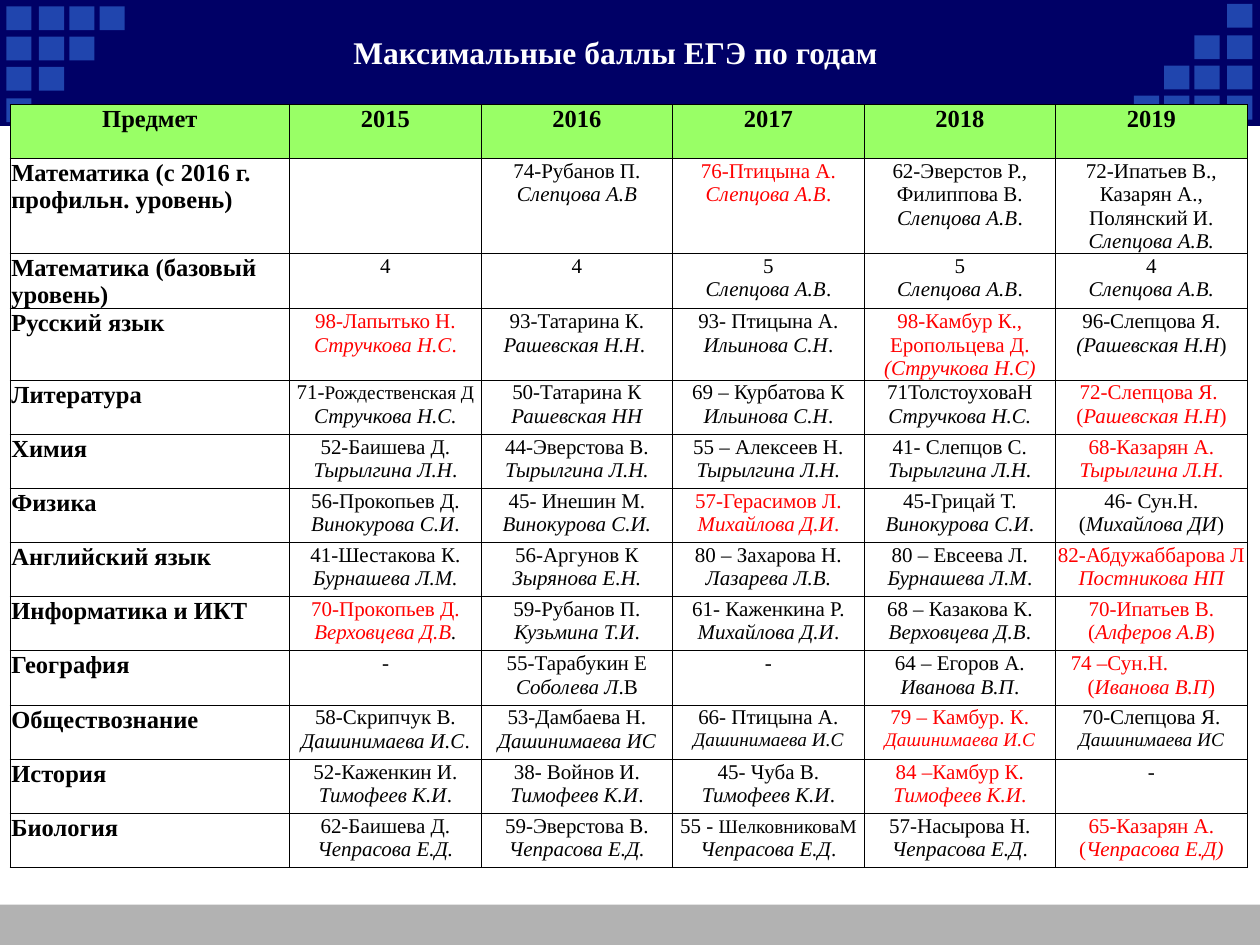
from lxml.etree import SubElement
from pptx import Presentation
from pptx.dml.color import RGBColor
from pptx.enum.shapes import MSO_SHAPE
from pptx.enum.text import MSO_ANCHOR, PP_ALIGN
from pptx.oxml.ns import qn
from pptx.util import Inches, Pt

FONT = "Times New Roman"
NAVY, BLUE, GREY, GREEN = "000066", "2045AE", "B2B2B2", "99FF66"
BLACK, WHITE, RED = "000000", "FFFFFF", "FF0000"

TITLE = "Максимальные баллы ЕГЭ по годам"
HEADER = ["Предмет", "2015", "2016", "2017", "2018", "2019"]
# Marks inside a cell: | new paragraph, * italic, ~ small, ^ red (each on or off).
RESULTS = [
    ["Математика (с 2016 г. профильн. уровень)", "", "74-Рубанов П.|*Слепцова А.В*",
     "^76-Птицына А.|*Слепцова А.В*.", "62-Эверстов Р., Филиппова В.|*Слепцова А.В*.",
     "72-Ипатьев В., Казарян А., Полянский И.|*Слепцова А.В.*"],
    ["Математика (базовый уровень)", "4", "4", "5|*Слепцова А.В*.",
     "5|*Слепцова А.В*.", "4|*Слепцова А.В.*"],
    ["Русский язык", "^98-Лапытько Н.|*Стручкова Н.С*.", "93-Татарина К.|*Рашевская Н.Н*. ",
     "93- Птицына А.|*Ильинова С.Н*.", "^98-Камбур К., Еропольцева Д.|*(Стручкова Н.С)*",
     "96-Слепцова Я.|*(Рашевская Н.Н*)"],
    ["Литература", "71-~Рождественская Д~|*Стручкова Н.С.*", "50-Татарина К|*Рашевская НН*",
     "69 – Курбатова К|*Ильинова С.Н*.", "71ТолстоуховаН|*Стручкова Н.С.*",
     "^72-Слепцова Я. |(*Рашевская Н.Н*)"],
    ["Химия", "52-Баишева Д.|*Тырылгина Л.Н*.", "44-Эверстова В.|*Тырылгина Л.Н.*",
     "55 – Алексеев Н.|*Тырылгина Л.Н.*", "41- Слепцов С.|*Тырылгина Л.Н.*",
     "^68-Казарян А.|*Тырылгина Л.Н*."],
    ["Физика", "56-Прокопьев Д.|*Винокурова С.И*.", "45- Инешин М. *Винокурова С.И.*",
     "^57-Герасимов Л.|*Михайлова Д.И*.", "45-Грицай Т.|*Винокурова С.И*.",
     "46- Сун.Н. (*Михайлова ДИ*)"],
    ["Английский язык", "41-Шестакова К.|*Бурнашева Л.М.*", "56-Аргунов К *Зырянова Е.Н.*",
     "80 – Захарова Н.|*Лазарева Л.В.*", "80 – Евсеева Л.|*Бурнашева Л.М*.",
     "^82-Абдужаббарова Л|*Постникова НП*"],
    ["Информатика и ИКТ", "^70-Прокопьев Д.|*Верховцева Д.В^.*", "59-Рубанов П.|*Кузьмина Т.И*.",
     "61- Каженкина Р.|*Михайлова Д.И*.", "68 – Казакова К.|*Верховцева Д.В*.",
     "^70-Ипатьев В.|(*Алферов А.В*)"],
    ["География", "-", "55-Тарабукин Е|*Соболева Л*.В", "-", "64 – Егоров А.|*Иванова В.П*.",
     "^74 –Сун.Н.|(*Иванова В.П*)"],
    ["Обществознание", "58-Скрипчук В.|*Дашинимаева И.С*.", "53-Дамбаева Н.|*Дашинимаева ИС*",
     "66- Птицына А.|~*Дашинимаева И.С*~", "^79 – Камбур. К.|~*Дашинимаева И.С*~",
     "70-Слепцова Я.|~*Дашинимаева ИС*~"],
    ["История", "52-Каженкин И.|*Тимофеев К.И*.", "38- Войнов И.|*Тимофеев К.И*.",
     "45- Чуба В.|*Тимофеев К.И*.", "^84 –Камбур К.|*Тимофеев К.И*.", "-"],
    ["Биология", "62-Баишева Д.|*Чепрасова Е.Д.*", "59-Эверстова В.|*Чепрасова Е.Д.*",
     "55 - ~ШелковниковаМ~|*Чепрасова Е.Д*.", "57-Насырова Н.|*Чепрасова Е.Д*.",
     "^65-Казарян А.|(*Чепрасова Е.Д)*"],
]
COLUMN_WIDTHS = [2.22] + [1.52] * 5
ROW_HEIGHTS = [0.43, 0.47] + [0.43] * 11
SQUARE_LEFTS = [0.05, 0.31, 0.55, 0.79]
SQUARE_TOPS = [0.05, 0.29, 0.53, 0.78]
SQUARE_WIDTH, SQUARE_HEIGHT = 0.2, 0.19
CELL_FORMAT = {"margin_left": Inches(0.01), "margin_right": Inches(0.01),
               "margin_top": Inches(0.01), "margin_bottom": 0,
               "vertical_anchor": MSO_ANCHOR.TOP}


def color(value):
    return RGBColor.from_string(value)


def add_rectangle(slide, left, top, width, height, fill):
    shape = slide.shapes.add_shape(MSO_SHAPE.RECTANGLE, Inches(left), Inches(top),
                                   Inches(width), Inches(height))
    shape.shadow.inherit = False
    shape.fill.solid()
    shape.fill.fore_color.rgb = color(fill)
    shape.line.fill.background()


def add_run(paragraph, text, size, text_color, bold=False, italic=False):
    run = paragraph.add_run()
    run.text = text
    values = {"name": FONT, "size": Pt(size), "bold": bold, "italic": italic}
    for name, value in values.items():
        setattr(run.font, name, value)
    run.font.color.rgb = color(text_color)


def write_marked(text_frame, text, size, bold):
    """Write text, turning its marks into paragraphs and run formats."""
    active = {"*": False, "~": False, "^": False}
    for index, line in enumerate(text.split("|")):
        paragraph = text_frame.paragraphs[0] if index == 0 else text_frame.add_paragraph()
        pending = ""
        for character in line + "\n":
            if character not in active and character != "\n":
                pending += character
                continue
            if pending:
                add_run(paragraph, pending, 11 if active["~"] else size,
                        RED if active["^"] else BLACK, bold, active["*"])
                pending = ""
            if character in active:
                active[character] = not active[character]


def add_borders(cell):
    properties = cell._tc.get_or_add_tcPr()
    for index, side in enumerate(["lnL", "lnR", "lnT", "lnB"]):
        line = SubElement(properties, qn(f"a:{side}"), w=str(Pt(0.5)))
        fill = SubElement(line, qn("a:solidFill"))
        SubElement(fill, qn("a:srgbClr"), val=BLACK)
        properties.insert(index, line)


def add_background(slide):
    add_rectangle(slide, 0, 7.18, 10, 0.32, GREY)
    add_rectangle(slide, 0, 0, 10, 1, NAVY)
    for row, top in enumerate(SQUARE_TOPS):
        for left in SQUARE_LEFTS[:4 - row]:
            turned = (9.99 - left - SQUARE_WIDTH, 1 - top - SQUARE_HEIGHT)
            for place in [(left, top), turned]:
                add_rectangle(slide, *place, SQUARE_WIDTH, SQUARE_HEIGHT, BLUE)


def add_results(slide):
    rows = [HEADER] + RESULTS
    table = slide.shapes.add_table(len(rows), len(HEADER), Inches(0.08), Inches(0.83),
                                   Inches(sum(COLUMN_WIDTHS)), Inches(sum(ROW_HEIGHTS))).table
    table.first_row = table.horz_banding = False
    for column, width in zip(table.columns, COLUMN_WIDTHS):
        column.width = Inches(width)
    for row, height in zip(table.rows, ROW_HEIGHTS):
        row.height = Inches(height)
    for row_index, texts in enumerate(rows):
        for column_index, text in enumerate(texts):
            cell = table.cell(row_index, column_index)
            for name, value in CELL_FORMAT.items():
                setattr(cell, name, value)
            is_header, is_subject = row_index == 0, column_index == 0
            if is_header:
                cell.fill.solid()
                cell.fill.fore_color.rgb = color(GREEN)
            else:
                cell.fill.background()
            add_borders(cell)
            strong = is_header or is_subject
            write_marked(cell.text_frame, text, 14 if strong else 12, strong)
            for paragraph in cell.text_frame.paragraphs:
                centered = is_header or not is_subject
                paragraph.alignment = PP_ALIGN.CENTER if centered else PP_ALIGN.LEFT
    geography = [row[0] for row in rows].index("География")
    shifted = table.cell(geography, len(HEADER) - 1).text_frame.paragraphs[0]
    shifted.alignment = PP_ALIGN.LEFT
    shifted._p.get_or_add_pPr().set("marL", str(Inches(0.11)))


def add_title(slide):
    title = slide.shapes.title
    title.left, title.top = Inches(0.2), Inches(0.21)
    title.width, title.height = Inches(9.37), Inches(0.4)
    title.text_frame.vertical_anchor = MSO_ANCHOR.MIDDLE
    paragraph = title.text_frame.paragraphs[0]
    paragraph.alignment = PP_ALIGN.CENTER
    add_run(paragraph, TITLE, 18, WHITE, bold=True)
    slide.shapes._spTree.append(title._element)


def main():
    presentation = Presentation()
    presentation.slide_width, presentation.slide_height = Inches(10), Inches(7.5)
    slide = presentation.slides.add_slide(presentation.slide_layouts[5])
    add_background(slide)
    add_results(slide)
    add_title(slide)
    presentation.save("out.pptx")


if __name__ == "__main__":
    main()
